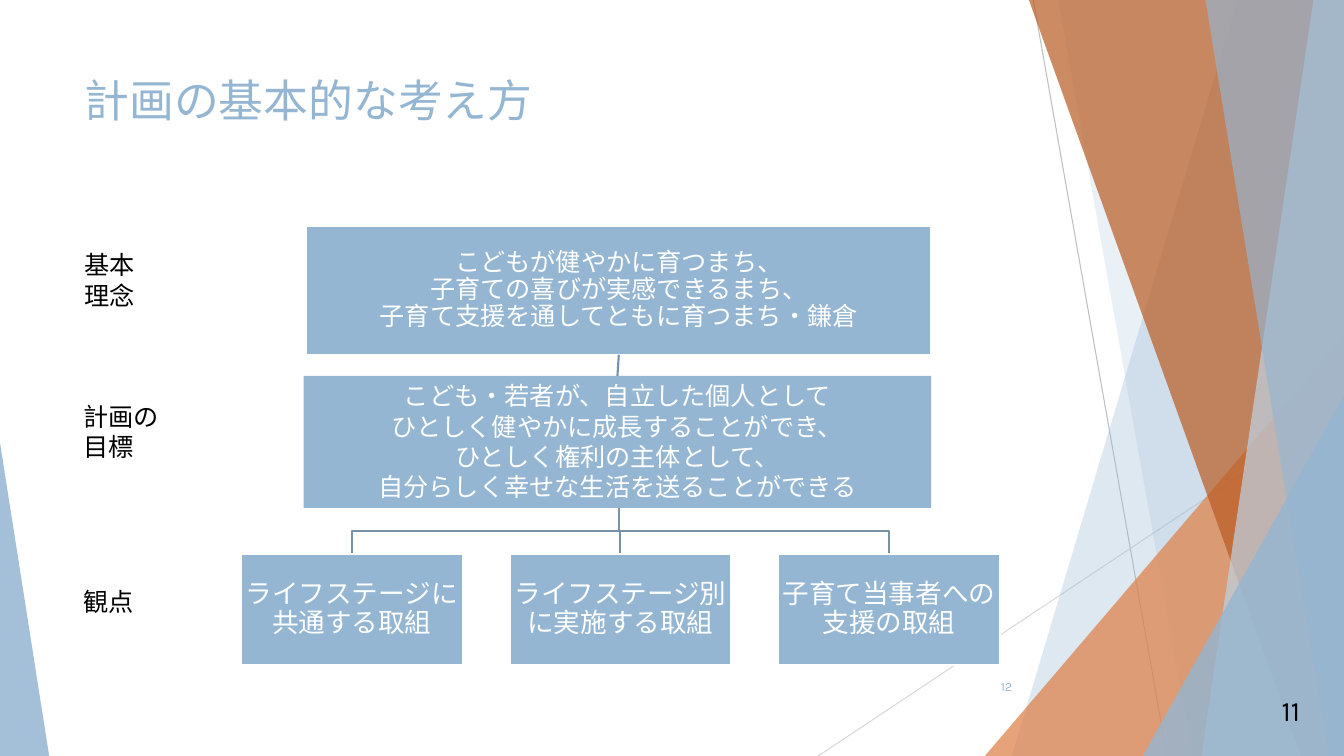
from dataclasses import dataclass
from typing import NamedTuple

from lxml import etree
from pptx import Presentation
from pptx import util as u
from pptx.dml.color import RGBColor
from pptx.enum import shapes, text
from pptx.oxml.ns import qn


@dataclass(frozen=True)
class Theme:
    blue: str = "94B6D2"
    pale_blue: str = "BFD3E4"
    orange: str = "DD8047"
    brown: str = "B95B22"
    link: str = "7792A8"
    white: str = "FFFFFF"
    black: str = "000000"
    grey: str = "BFBFBF"
    light_grey: str = "D9D9D9"
    body_font: str = "Karla"
    goal_font: str = "Arial"
    title_size: float = 32
    number_size: float = 20
    viewpoint_size: float = 19
    body_size: float = 18
    footer_size: float = 9


class Area(NamedTuple):
    left: float
    top: float
    width: float
    height: float

    def lengths(self) -> list[u.Cm]:
        return [u.Cm(value) for value in self]


class Facet(NamedTuple):
    """A band reaching the right edge, slanting from top_x down to bottom_x."""
    top_x: float
    bottom_x: float
    bottom_right: float
    color: str
    opacity: int


class Wedge(NamedTuple):
    area: Area
    apex: float
    color: str
    opacity: int


class Label(NamedTuple):
    area: Area
    paragraphs: tuple[str, ...]


THEME = Theme()
WIDTH, HEIGHT = 33.87, 19.05

RULES = [
    ((26.04, 0), (29.41, HEIGHT), THEME.grey),
    ((WIDTH, 10.24), (20.62, HEIGHT), THEME.light_grey),
]
BACK_FACETS = [
    Facet(31.19, 25.5, WIDTH, THEME.blue, 30),
    Facet(26.67, 30.05, WIDTH, THEME.blue, 20),
]
ORANGE_WEDGE = Wedge(Area(24.82, 8.46, 9.05, 10.59), 1, THEME.orange, 72)
FRONT_FACETS = [
    Facet(25.93, 32.79, WIDTH, THEME.brown, 70),
    Facet(33.1, 30.28, WIDTH, THEME.pale_blue, 70),
    Facet(30.38, 33.48, WIDTH, THEME.blue, 65),
]
FRONT_WEDGES = [
    Wedge(Area(28.8, 9.98, 5.07, 9.07), 1, THEME.blue, 80),
    Wedge(Area(0, 11.15, 1.24, 7.9), 0, THEME.blue, 85),
]

PHILOSOPHY = Label(Area(7.72, 5.69, 15.75, 3.25), (
    "こどもが健やかに育つまち、\n子育ての喜びが実感できるまち、\n"
    "子育て支援を通してともに育つまち・鎌倉",))
GOAL = Label(Area(7.65, 9.47, 15.82, 3.33), (
    "こども・若者が、自立した個人として",
    "ひとしく健やかに成長することができ、",
    "ひとしく権利の主体として、",
    "自分らしく幸せな生活を送ることができる"))
VIEWPOINTS = [
    "ライフステージに共通する取組",
    "ライフステージ別に実施する取組",
    "子育て当事者への支援の取組",
]
VIEWPOINT_LEFT, VIEWPOINT_STEP = 6.07, 6.77
ROW_LABELS = [
    Label(Area(1.88, 6.17, 2.79, 1.8), ("基本", "理念")),
    Label(Area(1.85, 9.98, 2.79, 1.8), ("計画の目標",)),
    Label(Area(1.85, 14.66, 2.79, 1.02), ("観点",)),
]


def paint(shape, color: str, opacity: int = 100) -> None:
    shape.shadow.inherit = False
    shape.fill.solid()
    shape.fill.fore_color.rgb = RGBColor.from_string(color)
    shape.line.fill.background()
    if opacity < 100:
        tint = shape.fill._xPr.find(qn("a:solidFill"))[0]
        etree.SubElement(tint, qn("a:alpha")).set("val", str(opacity * 1000))


def stroke(shape, color: str, width: float) -> None:
    shape.line.color.rgb = RGBColor.from_string(color)
    shape.line.width = u.Pt(width)


def write(shape, paragraphs: tuple[str, ...], *, size: float = THEME.body_size,
          font: str = THEME.body_font, color: str = THEME.black,
          align=text.PP_ALIGN.LEFT, anchor=text.MSO_ANCHOR.TOP,
          spacing: float = 1.0, inset: float | None = None) -> None:
    frame = shape.text_frame
    frame.word_wrap = True
    frame.vertical_anchor = anchor
    if inset is not None:
        frame.margin_left = frame.margin_right = u.Cm(inset)
        frame.margin_top = frame.margin_bottom = u.Cm(inset)
    for index, words in enumerate(paragraphs):
        para = frame.add_paragraph() if index else frame.paragraphs[0]
        para.text = words
        para.alignment = align
        para.line_spacing = spacing
        for span in para.runs:
            span.font.size = u.Pt(size)
            span.font.name = font
            span.font.color.rgb = RGBColor.from_string(color)


def add_text(page, area: Area, *paragraphs: str, **style) -> None:
    write(page.shapes.add_textbox(*area.lengths()), paragraphs, **style)


def add_box(page, area: Area, paragraphs: tuple[str, ...], *,
            outlined: bool = True, **style):
    box = page.shapes.add_shape(shapes.MSO_SHAPE.RECTANGLE, *area.lengths())
    paint(box, THEME.blue)
    if outlined:
        stroke(box, THEME.white, 1.5)
    write(box, paragraphs, color=THEME.white, align=text.PP_ALIGN.CENTER, **style)
    return box


def add_path(page, points: list[tuple[float, float]], close: bool):
    start, *rest = [(u.Cm(x), u.Cm(y)) for x, y in points]
    builder = page.shapes.build_freeform(*start)
    builder.add_line_segments(rest, close=close)
    return builder.convert_to_shape()


def add_line(page, start: tuple[float, float], end: tuple[float, float],
             color: str, width: float):
    line = page.shapes.add_connector(
        shapes.MSO_CONNECTOR.STRAIGHT, *[u.Cm(value) for value in start + end])
    stroke(line, color, width)
    etree.SubElement(line._element.spPr, qn("a:effectLst"))
    return line


def add_facet(page, facet: Facet) -> None:
    corners = [(facet.top_x, 0), (WIDTH, 0),
               (facet.bottom_right, HEIGHT), (facet.bottom_x, HEIGHT)]
    if facet.bottom_right < WIDTH:
        corners.insert(2, (WIDTH, HEIGHT))
    paint(add_path(page, corners, True), facet.color, facet.opacity)


def add_wedge(page, wedge: Wedge) -> None:
    shape = page.shapes.add_shape(
        shapes.MSO_SHAPE.ISOSCELES_TRIANGLE, *wedge.area.lengths())
    shape.adjustments[0] = wedge.apex
    paint(shape, wedge.color, wedge.opacity)


def draw_backdrop(page) -> None:
    for start, end, color in RULES:
        add_line(page, start, end, color, 0.75)
    for facet in BACK_FACETS:
        add_facet(page, facet)
    add_wedge(page, ORANGE_WEDGE)
    for facet in FRONT_FACETS:
        add_facet(page, facet)
    for wedge in FRONT_WEDGES:
        add_wedge(page, wedge)


def draw_plan(page) -> None:
    compact = dict(anchor=text.MSO_ANCHOR.MIDDLE, spacing=0.9, inset=0.03)
    philosophy = add_box(page, PHILOSOPHY.area, PHILOSOPHY.paragraphs,
                         font=THEME.goal_font, **compact)
    goal = add_box(page, GOAL.area, GOAL.paragraphs, outlined=False,
                   font=THEME.goal_font)
    trunk = add_line(page, (15.6, 8.94), (15.6, 9.47), THEME.link, 1.5)
    trunk.begin_connect(philosophy, 2)
    trunk.end_connect(goal, 0)
    for index, words in enumerate(VIEWPOINTS):
        area = Area(VIEWPOINT_LEFT + index * VIEWPOINT_STEP, 13.97, 5.59, 2.79)
        middle = area.left + area.width / 2
        branch = add_path(page, [(15.6, 12.8), (15.6, 13.39), (middle, 13.39),
                                 (middle, area.top)], False)
        branch.shadow.inherit = False
        branch.fill.background()
        stroke(branch, THEME.link, 1.5)
        add_box(page, area, (words,), size=THEME.viewpoint_size, **compact)


def main() -> None:
    deck = Presentation()
    deck.slide_width, deck.slide_height = u.Cm(WIDTH), u.Cm(HEIGHT)
    page = deck.slides.add_slide(deck.slide_layouts[6])
    draw_backdrop(page)
    add_text(page, Area(1.88, 1.7, 23.88, 1.8), "計画の基本的な考え方",
             size=THEME.title_size, color=THEME.blue)
    draw_plan(page)
    for label in ROW_LABELS:
        add_text(page, label.area, *label.paragraphs)
    add_text(page, Area(23.85, 16.79, 1.91, 1.02), "12", size=THEME.footer_size,
             color=THEME.blue, align=text.PP_ALIGN.RIGHT,
             anchor=text.MSO_ANCHOR.MIDDLE)
    add_text(page, Area(32.05, 17.35, 1.24, 1.12), "11", size=THEME.number_size)
    deck.save("out.pptx")


if __name__ == "__main__":
    main()
